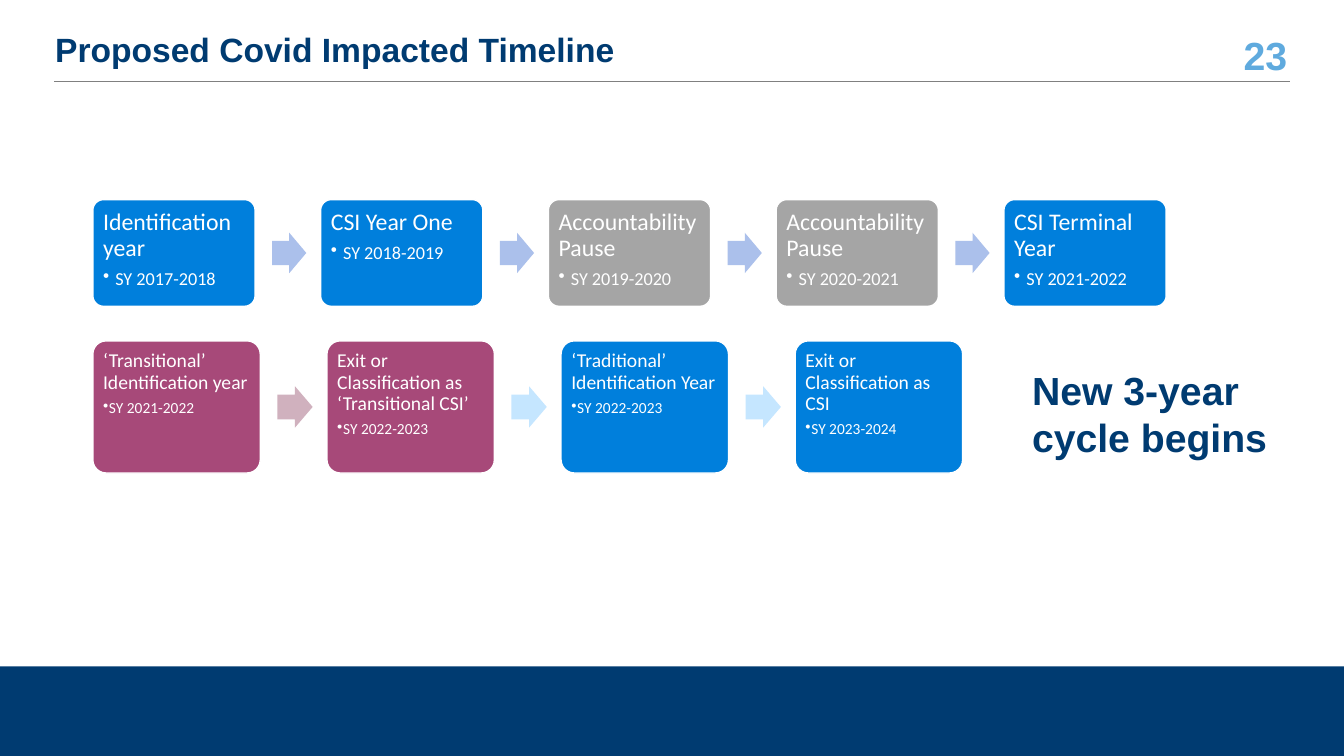
from lxml.etree import SubElement
from pptx import Presentation
from pptx.dml.color import RGBColor
from pptx.enum.shapes import MSO_CONNECTOR, MSO_SHAPE
from pptx.enum.text import MSO_ANCHOR, PP_ALIGN
from pptx.oxml.ns import qn
from pptx.util import Cm, Pt

COLORS = {
    "navy": "003B71",
    "sky": "5FAADE",
    "rule": "808080",
    "white": "FFFFFF",
    "blue": "007FDC",
    "gray": "A5A5A5",
    "plum": "A74979",
    "periwinkle": "ABC0EB",
    "rose": "D0B1BE",
    "ice": "C5E6FF",
}

CURRENT_CYCLE = {
    "steps": [
        ("Identification year", "SY 2017-2018", "blue"),
        ("CSI Year One", "SY 2018-2019", "blue"),
        ("Accountability Pause", "SY 2019-2020", "gray"),
        ("Accountability Pause", "SY 2020-2021", "gray"),
        ("CSI Terminal Year", "SY 2021-2022", "blue"),
    ],
    "arrows": ["periwinkle"] * 4,
    "top": 5.03, "pitch": 5.74, "card": (4.09, 2.69),
    "arrow_offset": 4.52, "arrow": (0.86, 1.02),
    "inset": 0.18, "indent": 0.31, "heading": 17, "detail": 13,
}

NEXT_CYCLE = {
    "steps": [
        ("‘Transitional’ Identification year", "SY 2021-2022", "plum"),
        ("Exit or Classification as ‘Transitional CSI’", "SY 2022-2023", "plum"),
        ("‘Traditional’ Identification Year", "SY 2022-2023", "blue"),
        ("Exit or Classification as CSI", "SY 2023-2024", "blue"),
    ],
    "arrows": ["rose", "ice", "ice"],
    "top": 8.59, "pitch": 5.9, "card": (4.22, 3.33),
    "arrow_offset": 4.65, "arrow": (0.89, 1.04),
    "inset": 0.16, "indent": 0.15, "heading": 14, "detail": 11,
}

ROW_LEFT = 2.34


def color(name):
    return RGBColor.from_string(COLORS[name])


def write(paragraph, text, size, ink="white", font="Calibri", bold=False,
          align=PP_ALIGN.LEFT, line_spacing=0.9, after=0, bullet_indent=None):
    if bullet_indent is not None:
        paragraph.level = 1
        properties = paragraph._p.get_or_add_pPr()
        properties.set("marL", str(Cm(bullet_indent)))
        properties.set("indent", str(-Cm(bullet_indent)))
        SubElement(properties, qn("a:buChar"), char="•")
    paragraph.alignment = align
    paragraph.line_spacing = line_spacing
    paragraph.space_after = Pt(after)
    run = paragraph.add_run()
    run.text = text
    run.font.name = font
    run.font.size = Pt(size)
    run.font.bold = bold
    run.font.color.rgb = color(ink)


def add_label(slide, text, left, top, width, height, **style):
    label = slide.shapes.add_textbox(Cm(left), Cm(top), Cm(width), Cm(height))
    frame = label.text_frame
    frame.word_wrap = True
    frame.vertical_anchor = MSO_ANCHOR.MIDDLE
    write(frame.paragraphs[0], text, font="Arial", bold=True, **style)


def add_block(shapes, kind, left, top, width, height, fill, outline=None):
    block = shapes.add_shape(kind, Cm(left), Cm(top), Cm(width), Cm(height))
    block.shadow.inherit = False
    block.fill.solid()
    block.fill.fore_color.rgb = color(fill)
    if outline:
        block.line.color.rgb = color(outline)
        block.line.width = Pt(1)
    else:
        block.line.fill.background()
    return block


def add_rule(slide, left, right, y):
    rule = slide.shapes.add_connector(
        MSO_CONNECTOR.STRAIGHT, Cm(left), Cm(y), Cm(right), Cm(y))
    rule.line.color.rgb = color("rule")
    rule.line.width = Pt(0.5)
    SubElement(rule._element.spPr, qn("a:effectLst"))


def add_step(shapes, step, left, cycle):
    heading, school_year, fill = step
    card = add_block(shapes, MSO_SHAPE.ROUNDED_RECTANGLE, left, cycle["top"],
                     *cycle["card"], fill, outline="white")
    card.adjustments[0] = 0.1
    frame = card.text_frame
    frame.word_wrap = True
    frame.vertical_anchor = MSO_ANCHOR.TOP
    inset = Cm(cycle["inset"])
    frame.margin_left = frame.margin_right = inset
    frame.margin_top = frame.margin_bottom = inset
    write(frame.paragraphs[0], heading, cycle["heading"],
          after=round(cycle["heading"] * 0.35))
    write(frame.add_paragraph(), school_year, cycle["detail"],
          after=round(cycle["detail"] * 0.15), bullet_indent=cycle["indent"])


def add_arrow(shapes, fill, left, cycle):
    width, height = cycle["arrow"]
    top = cycle["top"] + (cycle["card"][1] - height) / 2
    arrow = add_block(shapes, MSO_SHAPE.RIGHT_ARROW, left, top, width, height, fill)
    arrow.adjustments[0] = 0.6
    arrow.adjustments[1] = 0.5


def add_cycle(slide, cycle):
    shapes = slide.shapes.add_group_shape().shapes
    for index, step in enumerate(cycle["steps"]):
        add_step(shapes, step, ROW_LEFT + index * cycle["pitch"], cycle)
    for index, fill in enumerate(cycle["arrows"]):
        left = ROW_LEFT + index * cycle["pitch"] + cycle["arrow_offset"]
        add_arrow(shapes, fill, left, cycle)


def main():
    deck = Presentation()
    deck.slide_width, deck.slide_height = Cm(33.87), Cm(19.05)
    slide = deck.slides.add_slide(deck.slide_layouts[6])
    add_block(slide.shapes, MSO_SHAPE.RECTANGLE, 0, 16.79, 33.87, 2.26, "navy")
    add_label(slide, "23", 30.66, 0.84, 2.03, 1.07, size=28, ink="sky",
              align=PP_ALIGN.RIGHT, line_spacing=1)
    add_rule(slide, 1.37, 32.51, 2.05)
    add_label(slide, "Proposed Covid Impacted Timeline", 1.14, 0.76, 29.46, 1.07,
              size=24, ink="navy")
    add_cycle(slide, CURRENT_CYCLE)
    add_cycle(slide, NEXT_CYCLE)
    add_label(slide, "New 3-year cycle begins", 25.76, 8.84, 7.34, 3.15,
              size=28, ink="navy", line_spacing=1)
    deck.save("out.pptx")


if __name__ == "__main__":
    main()
